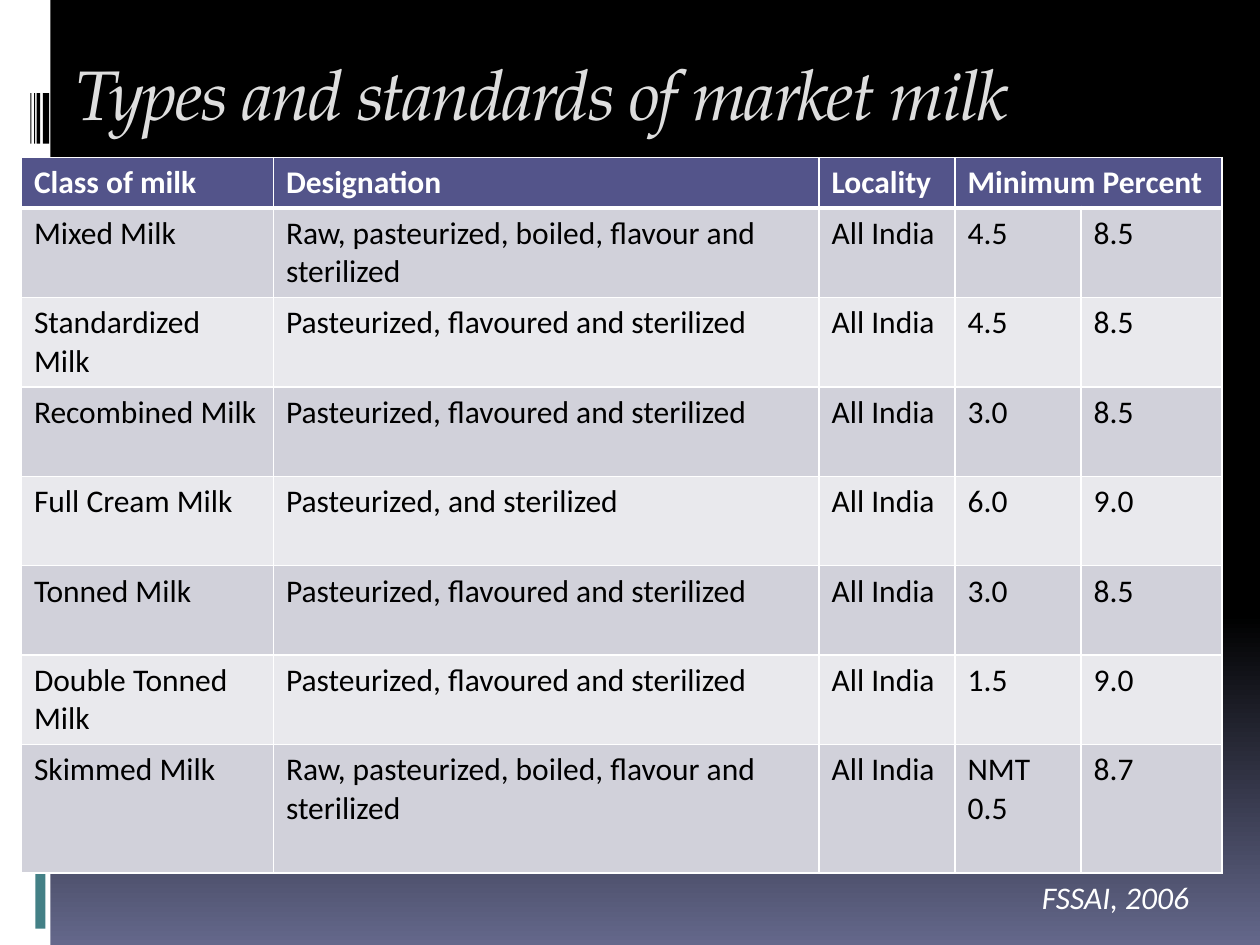
from copy import deepcopy

from lxml.etree import SubElement
from pptx import Presentation
from pptx.dml.color import RGBColor
from pptx.enum.shapes import MSO_SHAPE
from pptx.enum.text import MSO_ANCHOR
from pptx.oxml.ns import qn
from pptx.util import Inches, Pt

COLORS = {
    "black": "000000", "white": "FFFFFF", "dusk": "64688B", "title": "DEDEDE",
    "teal": "438086", "purple": "A04DA3", "slate": "424456",
    "header": "53548A", "odd": "D1D1DA", "even": "E9E9ED",
}
FORMATS = {
    "title": {"name": "TeX Gyre Pagella", "size": Pt(40), "italic": True, "color": "title"},
    "header": {"name": "Calibri", "size": Pt(18), "bold": True, "color": "white"},
    "body": {"name": "Calibri", "size": Pt(18), "bold": False, "color": "black"},
    "source": {"name": "Calibri", "size": Pt(18), "italic": True, "color": "white"},
}
BARS = [
    (0, 0, 0.4, 7.5, "white"),
    (0.28, 5.52, 0.08, 1.85, "teal"),
    (0.28, 5.25, 0.08, 0.25, "purple"),
    (0.28, 5.07, 0.08, 0.15, "slate"),
    (0.28, 4.97, 0.08, 0.08, "teal"),
] + [(x, 0.74, w, 0.4, "black")
     for x, w in ((0.34, 0.05), (0.29, 0.03), (0.27, 0.01), (0.24, 0.01))]

FLAVOURED = "Pasteurized, flavoured and sterilized"
RAW = "Raw, pasteurized, boiled, flavour and sterilized"
HEADER = ["Class of milk", "Designation", "Locality", "Minimum Percent", ""]
MILKS = [
    ("Mixed Milk", RAW, "4.5", "8.5"),
    ("Standardized Milk", FLAVOURED, "4.5", "8.5"),
    ("Recombined Milk", FLAVOURED, "3.0", "8.5"),
    ("Full Cream Milk", "Pasteurized, and sterilized", "6.0", "9.0"),
    ("Tonned Milk", FLAVOURED, "3.0", "8.5"),
    ("Double Tonned Milk", FLAVOURED, "1.5", "9.0"),
    ("Skimmed Milk", RAW, "NMT 0.5", "8.7"),
]
COLUMNS = [2, 4.33, 1.08, 1, 1.12]
ROWS = [0.4] + [0.71] * 6 + [1.02]


def rgb(key):
    return RGBColor.from_string(COLORS[key])


class Deck:
    """Holds the style and the current slide."""

    def __init__(self):
        self.prs = Presentation()
        self.prs.slide_width, self.prs.slide_height = Inches(10), Inches(7.5)
        self.s = self.prs.slides.add_slide(self.prs.slide_layouts[6])

    def background(self, stops):
        fill = self.s.background.fill
        fill.gradient()
        fill.gradient_angle = 270
        first = next(self.s.element.iter(qn("a:gs")))
        first.addnext(deepcopy(first))
        for stop, (position, key) in zip(fill.gradient_stops, stops):
            stop.position = position
            stop.color.rgb = rgb(key)

    def bar(self, x, y, w, h, key):
        sp = self.s.shapes.add_shape(
            MSO_SHAPE.RECTANGLE, Inches(x), Inches(y), Inches(w), Inches(h))
        sp.shadow.inherit = False
        sp.fill.solid()
        sp.fill.fore_color.rgb = rgb(key)
        sp.line.fill.background()

    def run(self, tf, text, style):
        r = tf.paragraphs[0].add_run()
        r.text = text
        for name, value in FORMATS[style].items():
            if name == "color":
                r.font.color.rgb = rgb(value)
            else:
                setattr(r.font, name, value)
        return r

    def text(self, x, y, w, h, text, style, anchor=MSO_ANCHOR.TOP):
        sp = self.s.shapes.add_textbox(Inches(x), Inches(y), Inches(w), Inches(h))
        tf = sp.text_frame
        tf.word_wrap = True
        tf.vertical_anchor = anchor
        return self.run(tf, text, style)

    def borders(self, cell, top, bottom):
        tcPr = cell._tc.get_or_add_tcPr()
        widths = {"a:lnL": 1, "a:lnR": 1, "a:lnT": top, "a:lnB": bottom}
        for i, (tag, width) in enumerate(widths.items()):
            ln = SubElement(tcPr, qn(tag), w=str(Pt(width)))
            fill = SubElement(ln, qn("a:solidFill"))
            SubElement(fill, qn("a:srgbClr"), val=COLORS["white"])
            tcPr.insert(i, ln)

    def table(self, x, y, columns, rows, data):
        table = self.s.shapes.add_table(
            len(rows), len(columns), Inches(x), Inches(y),
            Inches(sum(columns)), Inches(sum(rows))).table
        for column, width in zip(table.columns, columns):
            column.width = Inches(width)
        for i, (row, height, values) in enumerate(zip(table.rows, rows, data)):
            row.height = Inches(height)
            key = "header" if i == 0 else ("even", "odd")[i % 2]
            for cell, value in zip(row.cells, values):
                cell.fill.solid()
                cell.fill.fore_color.rgb = rgb(key)
                self.borders(cell, 3 if i == 1 else 1, 3 if i == 0 else 1)
                if value:
                    self.run(cell.text_frame, value, "body" if i else "header")
        table.cell(0, 3).merge(table.cell(0, 4))


def main():
    deck = Deck()
    deck.background([(0, "black"), (0.65, "black"), (1, "dusk")])
    for bar in BARS:
        deck.bar(*bar)
    title = deck.text(0.5, 0.3, 9, 0.87, "Types and standards of market milk",
                      "title", MSO_ANCHOR.MIDDLE)
    title.font._element.set("spc", "-100")
    data = [HEADER] + [(milk, kind, "All India", fat, snf) for milk, kind, fat, snf in MILKS]
    deck.table(0.17, 1.25, COLUMNS, ROWS, data)
    deck.text(8.17, 6.92, 1.5, 0.4, "FSSAI, 2006", "source")
    deck.prs.save("out.pptx")


if __name__ == "__main__":
    main()
